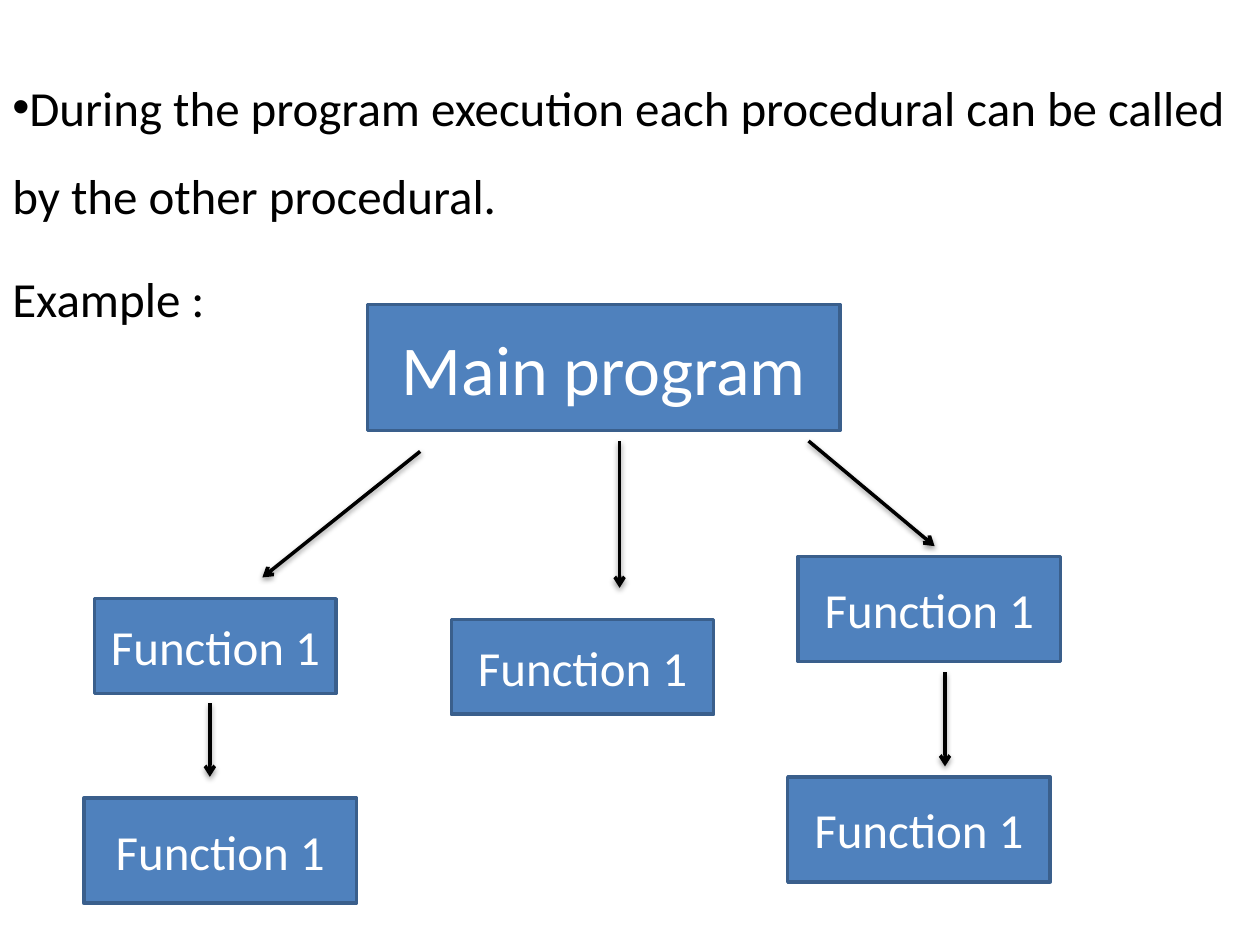
from typing import NamedTuple

from lxml import etree
from pptx import Presentation
from pptx import util as u
from pptx.dml.color import RGBColor
from pptx.enum import shapes, text
from pptx.oxml import ns

BLACK = RGBColor(0x00, 0x00, 0x00)
WHITE = RGBColor(0xFF, 0xFF, 0xFF)
BLUE = RGBColor(0x4F, 0x81, 0xBD)
DARK_BLUE = RGBColor(0x3A, 0x5F, 0x8C)
FONT = "Calibri"
BODY_SIZE = 28
LINE_WIDTH = u.Pt(2)


class Box(NamedTuple):
    """A labelled rectangle, in centimetres."""
    left: float
    top: float
    width: float
    height: float
    label: str = "Function 1"
    size: int = BODY_SIZE


class Arrow(NamedTuple):
    """A straight arrow from its start to its end, in centimetres."""
    start_x: float
    start_y: float
    end_x: float
    end_y: float


STATEMENT = Box(0, 0.84, 25.4, 3.66, "During the program execution each procedural "
                "can be called by the other procedural.")
EXAMPLE = Box(0, 5.28, 4.88, 1.45, "Example :")

PROGRAM_BOXES = [
    Box(7.41, 6.14, 9.53, 2.54, "Main program", 40),
    Box(1.91, 12.07, 4.87, 1.91),
    Box(9.1, 12.49, 5.29, 1.91),
    Box(16.09, 11.22, 5.29, 2.12),
    Box(1.69, 16.09, 5.5, 2.12),
    Box(15.88, 15.66, 5.29, 2.12),
]

CALL_ARROWS = [
    Arrow(8.47, 9.1, 5.29, 11.64),
    Arrow(12.49, 8.89, 12.49, 11.85),
    Arrow(16.3, 8.89, 18.84, 11.01),
    Arrow(4.23, 14.18, 4.23, 15.66),
    Arrow(19.05, 13.55, 19.05, 15.45),
]


def add_element(parent, tag: str, **attributes: str):
    element = etree.SubElement(parent, ns.qn(tag))
    for name, value in attributes.items():
        element.set(name, value)
    return element


def write_label(shape, box: Box, color: RGBColor):
    """Set the single paragraph of a shape and return it."""
    shape.text_frame.word_wrap = True
    paragraph = shape.text_frame.paragraphs[0]
    paragraph.text = box.label
    font = paragraph.runs[0].font
    font.name, font.size, font.color.rgb = FONT, u.Pt(box.size), color
    return paragraph


def add_text(slide, box: Box):
    shape = slide.shapes.add_textbox(*map(u.Cm, box[:4]))
    paragraph = write_label(shape, box, BLACK)
    shape.text_frame.auto_size = text.MSO_AUTO_SIZE.SHAPE_TO_FIT_TEXT
    return paragraph


def add_statement(slide, box: Box) -> None:
    """Add a bulleted paragraph whose lines all start at the left inset."""
    paragraph = add_text(slide, box)
    paragraph.line_spacing = 1.5
    properties = paragraph._p.get_or_add_pPr()
    add_element(properties, "a:buFont", typeface="Arial")
    add_element(properties, "a:buChar", char="•")


def add_box(slide, box: Box) -> None:
    shape = slide.shapes.add_shape(shapes.MSO_SHAPE.RECTANGLE, *map(u.Cm, box[:4]))
    shape.shadow.inherit = False
    shape.fill.solid()
    shape.fill.fore_color.rgb = BLUE
    shape.line.color.rgb = DARK_BLUE
    shape.line.width = LINE_WIDTH
    shape.text_frame.vertical_anchor = text.MSO_ANCHOR.MIDDLE
    write_label(shape, box, WHITE).alignment = text.PP_ALIGN.CENTER


def add_arrow(slide, arrow: Arrow) -> None:
    """Add a connector with an open head and a soft shadow below it."""
    connector = slide.shapes.add_connector(
        shapes.MSO_CONNECTOR.STRAIGHT, *map(u.Cm, arrow))
    connector.line.color.rgb = BLACK
    connector.line.width = LINE_WIDTH
    add_element(connector.line._get_or_add_ln(), "a:tailEnd", type="arrow")
    effects = add_element(connector._element.spPr, "a:effectLst")
    shadow = add_element(effects, "a:outerShdw", blurRad="40000", dist="20000",
                         dir="5400000", rotWithShape="0")
    color = add_element(shadow, "a:srgbClr", val=str(BLACK))
    add_element(color, "a:alpha", val="38000")


def main() -> None:
    presentation = Presentation()
    presentation.slide_width = u.Cm(25.4)
    presentation.slide_height = u.Cm(19.05)
    slide = presentation.slides.add_slide(
        presentation.slide_layouts.get_by_name("Blank"))
    add_statement(slide, STATEMENT)
    add_text(slide, EXAMPLE)
    for box in PROGRAM_BOXES:
        add_box(slide, box)
    for arrow in CALL_ARROWS:
        add_arrow(slide, arrow)
    presentation.save("out.pptx")


if __name__ == "__main__":
    main()
